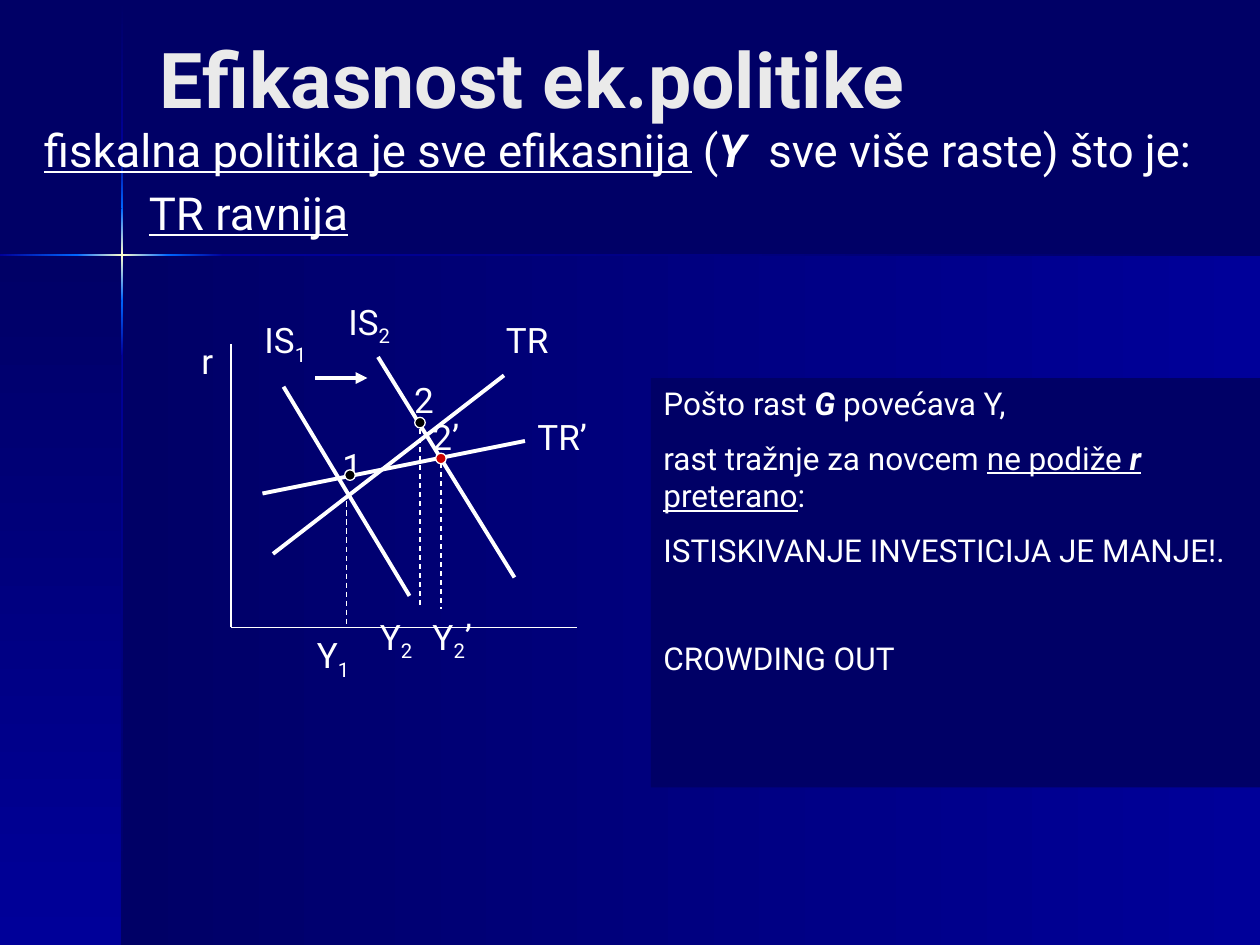
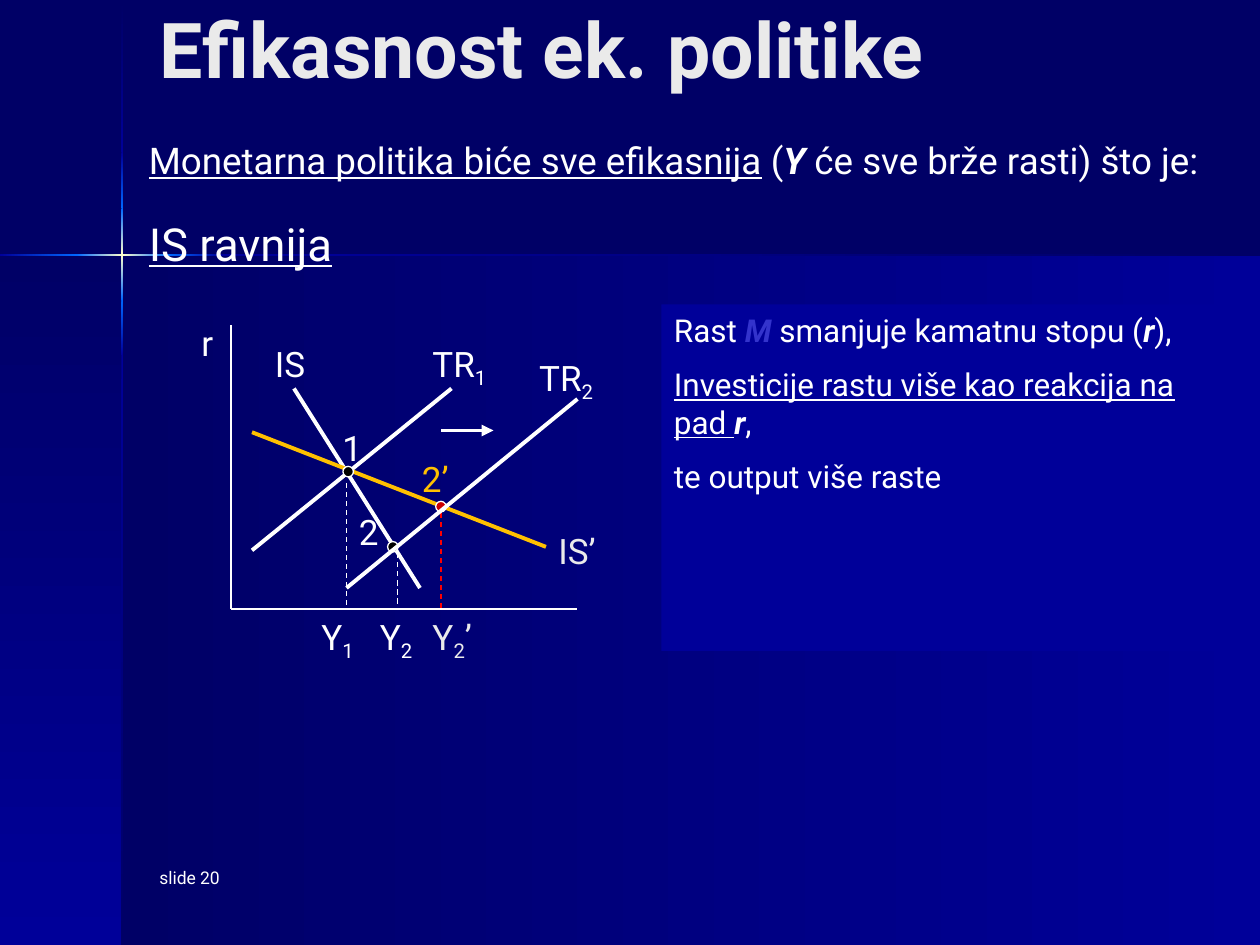
from itertools import pairwise

from lxml import etree
from pptx import Presentation
from pptx.dml.color import RGBColor
from pptx.enum.dml import MSO_LINE
from pptx.enum.shapes import MSO_CONNECTOR, MSO_SHAPE
from pptx.enum.text import MSO_ANCHOR, MSO_AUTO_SIZE, PP_ALIGN
from pptx.oxml.ns import qn
from pptx.util import Pt

RECT, OVAL = MSO_SHAPE.RECTANGLE, MSO_SHAPE.OVAL
STRAIGHT, DASH = MSO_CONNECTOR.STRAIGHT, MSO_LINE.DASH
TOP, MIDDLE = MSO_ANCHOR.TOP, MSO_ANCHOR.MIDDLE
LEFT, NO_FIT = PP_ALIGN.LEFT, MSO_AUTO_SIZE.NONE

FONT = "Roboto"
WIDTH, HEIGHT = 720, 540
STAR_X, STAR_Y = 70, 145.5
TITLE_ONLY = 5
COLORS = {
    "navy": "000066", "blue": "000099", "azure": "0066FF", "cream": "FFFFCC",
    "white": "FFFFFF", "silver": "EAEAEA", "indigo": "3333CC", "gold": "FFC000",
    "black": "000000", "crimson": "CC0000", "red": "FF0000",
}


def color(name):
    """Return the named colour."""
    return RGBColor.from_string(COLORS[name])


def points(*lengths):
    """Convert numbers to lengths in points."""
    return [Pt(length) for length in lengths]


def write(frame, *paragraphs, size=20, ink="white", bold=False, anchor=TOP,
          gaps=(), leading=None):
    """Fill a frame; a run is text or (text, marks b/i/u/s for subscript, colour)."""
    frame.word_wrap = True
    frame.auto_size = NO_FIT
    frame.vertical_anchor = anchor
    for index, runs in enumerate(paragraphs):
        paragraph = frame.add_paragraph() if index else frame.paragraphs[0]
        paragraph.alignment = LEFT
        paragraph.line_spacing = leading
        if index:
            paragraph.space_before = Pt(gaps[index - 1])
        for part in [runs] if isinstance(runs, str) else runs:
            text, marks, tint = ((part,) if isinstance(part, str) else part) \
                + ("", ink)[-3 + (1 if isinstance(part, str) else len(part)):] \
                if isinstance(part, str) or len(part) < 3 else part
            run = paragraph.add_run()
            run.text = text
            font = run.font
            font.name, font.size = FONT, Pt(size)
            font.bold = bold or "b" in marks
            font.italic, font.underline = "i" in marks, "u" in marks
            font.color.rgb = color(tint)
            if "s" in marks:
                run._r.get_or_add_rPr().set("baseline", "-25000")


def add_text(slide, box, *paragraphs, **style):
    """Place a text box."""
    write(slide.shapes.add_textbox(*points(*box)).text_frame, *paragraphs, **style)


def add_solid(slide, kind, box, fill, outline=None):
    """Place a preset shape in one colour."""
    solid = slide.shapes.add_shape(kind, *points(*box))
    solid.shadow.inherit = False
    solid.fill.solid()
    solid.fill.fore_color.rgb = color(fill)
    if outline:
        solid.line.color.rgb = color(outline)
        solid.line.width = Pt(0.75)
    else:
        solid.line.fill.background()
    return solid


def add_line(slide, ends, ink="white", width=2.25, dashed=False, arrow=False):
    """Draw a straight line between two points."""
    line = slide.shapes.add_connector(STRAIGHT, *points(*ends))
    line.line.color.rgb = color(ink)
    line.line.width = Pt(width)
    if dashed:
        line.line.dash_style = DASH
    properties = line.element.spPr
    if arrow:
        etree.SubElement(properties.find(qn("a:ln")), qn("a:tailEnd"), type="triangle")
    etree.SubElement(properties, qn("a:effectLst"))


def add_fade(slide, box, start, end, down):
    """Place a rectangle that fades between two colours."""
    fade = add_solid(slide, RECT, box, start)
    fade.fill.gradient()
    fade.fill.gradient_angle = 270 if down else 0
    for stop, name in zip(fade.fill.gradient_stops, (start, end)):
        stop.color.rgb = color(name)
    return fade


def build_backdrop(master, slide):
    """Build the fading panels and the star beams, and hand them to the master."""
    master.background.fill.solid()
    master.background.fill.fore_color.rgb = color("navy")
    across = ((0, "blue"), (44, "azure"), (STAR_X, "cream"), (96, "azure"),
              (127.5, "blue"), (WIDTH, "navy"))
    down = ((0, "navy"), (87, "blue"), (119, "azure"), (STAR_Y, "cream"),
            (171.5, "azure"), (203, "blue"), (HEIGHT, "navy"))
    below = HEIGHT - STAR_Y
    fades = [
        add_fade(slide, (STAR_X, STAR_Y, WIDTH - STAR_X, below), "navy", "blue", False),
        add_fade(slide, (0, STAR_Y, STAR_X, below), "navy", "blue", True),
    ]
    for (begin, first), (end, last) in pairwise(down):
        beam = (STAR_X - 0.6, begin, 1.2, end - begin)
        fades.append(add_fade(slide, beam, first, last, True))
    for (begin, first), (end, last) in pairwise(across):
        beam = (begin, STAR_Y - 0.6, end - begin, 1.2)
        fades.append(add_fade(slide, beam, first, last, False))
    for position, fade in enumerate(fades, 2):
        master.shapes.element.insert(position, fade.element)


def set_title(slide, text, top):
    """Place and format the slide title."""
    title = slide.shapes.title
    title.left, title.top, title.width, title.height = points(84, top, 594, 113)
    write(title.text_frame, text, size=44, ink="silver", bold=True, anchor=MIDDLE)


def add_panel(slide, box, fill, *paragraphs, gaps):
    """Place the panel that explains the graph."""
    panel = add_solid(slide, RECT, box, fill)
    write(panel.text_frame, *paragraphs, size=18, gaps=gaps)


def add_graph(slide, box, curves, arrow, drops, labels, dots, front=()):
    """Draw axes, curves, dashed drops, labels and equilibrium dots in a box."""
    left, top, width, height = box

    def stroke(x1, y1, x2, y2, **style):
        """Draw a line measured from the corner of the graph."""
        add_line(slide, (left + x1, top + y1, left + x2, top + y2), **style)

    stroke(0, 0, 0, height, width=0.75)
    stroke(0, height, width, height, width=0.75)
    for ends, ink in curves:
        stroke(*ends, ink=ink)
    stroke(*arrow, arrow=True)
    for x, start, end, ink in drops:
        stroke(x, start, x, end, ink=ink, width=0.75, dashed=True)
    for x, y, name, ink in labels:
        add_text(slide, (left + x, top + y, 54, 31), name, ink=ink)
    for x, y, fill in dots:
        add_solid(slide, OVAL, (left + x - 3, top + y - 3, 6, 6), fill, "white")
    for ends, ink in front:
        stroke(*ends, ink=ink)


def indexed(name, index, *tail):
    """Return the runs of a name with a subscript."""
    return [name, (index, "s"), *tail]


def build_fiscal(slide):
    """Build the slide on fiscal policy."""
    set_title(slide, "Efikasnost ek.politike", -12)
    add_text(slide, (18, 66, 702, 54),
             [("fiskalna politika je sve efikasnija", "u"), " (", ("Y ", "bi"),
              " sve više raste) što je:"], size=26)
    add_text(slide, (78, 102, 642, 48), [("TR ravnija", "u")], size=26)
    add_panel(slide, (372, 216, 348, 234), "navy",
              ["Pošto rast ", ("G ", "bi"), "povećava Y,"],
              ["rast tražnje za novcem ", ("ne podiže ", "u"), ("r", "biu"),
               (" preterano", "u"), ":"],
              "ISTISKIVANJE INVESTICIJA JE MANJE!.",
              "CROWDING OUT", gaps=(9.5, 9.5, 40))
    add_graph(
        slide, (132, 196.5, 198, 162),
        curves=[((18, 85.5, 168, 55.5), "white"), ((84, 7.5, 162, 133.5), "white"),
                ((24, 120, 156, 18), "white"), ((30, 24.5, 102, 144), "white")],
        arrow=(48, 19.5, 78, 19.5),
        drops=[(108, 48.5, 150.5, "white"), (66, 90, 162, "white"),
               (120, 68, 151.5, "white")],
        labels=[(168, 37.5, "TR’", "white"), (150, -18, "TR", "white"),
                (12, -18, indexed("IS", "1"), "white"),
                (60, -28.5, indexed("IS", "2"), "white"),
                (42, 162, indexed("Y", "1"), "white"),
                (78, 151.5, indexed("Y", "2"), "white"),
                (108, 151.5, indexed("Y", "2", "’"), "white"),
                (-24, -6, "r", "white"), (56.5, 54, "1", "white"),
                (97.5, 16, "2", "white"), (108, 37.5, "2’", "white")],
        dots=[(68, 75, "black"), (108, 45, "black"), (120, 65.5, "crimson")])


def build_monetary(slide):
    """Build the slide on monetary policy."""
    set_title(slide, "Efikasnost ek. politike", -29)
    add_text(slide, (78, 78, 618, 54),
             [("Monetarna politika biće sve efikasnija", "u"), " (", ("Y ", "bi"),
              "će sve brže rasti) što je:"], size=21, leading=0.9)
    add_text(slide, (78, 120, 642, 48), [("IS ravnija", "u")], size=26)
    add_panel(slide, (378, 174, 318, 198), "blue",
              ["Rast ", ("M ", "bi", "indigo"), "smanjuje kamatnu stopu (",
               ("r", "bi"), "),"],
              [("Investicije rastu više kao reakcija na pad ", "u"), ("r", "bi"), ","],
              "te output više raste", gaps=(9.5, 9.5))
    add_graph(
        slide, (132, 186, 198, 162),
        curves=[((12, 128.5, 126, 36), "white"), ((36, 36, 108, 150), "white"),
                ((12, 61, 180, 126.5), "gold")],
        arrow=(120, 60, 150, 60),
        drops=[(95, 125, 161, "white"), (66, 90, 162, "white"),
               (120, 102, 162, "red")],
        labels=[(18, 6, "IS", "white"), (180, 113, "IS’", "silver"),
                (108, 6, indexed("TR", "1"), "white"),
                (169, 14, indexed("TR", "2"), "white"),
                (44.5, 162, indexed("Y", "1"), "white"),
                (78, 162, indexed("Y", "2"), "white"),
                (108, 162, [("Y", "", "silver"), ("2", "s", "silver"), "’"], "silver"),
                (-24, -6, "r", "white"), (56.5, 54, "1", "white"),
                (66, 102, "2", "white"), (102, 72, "2’", "gold")],
        dots=[(67, 83.5, "black"), (92.5, 126.5, "black"), (120, 103.5, "crimson")],
        front=[((66, 150, 198, 42), "white")])
    add_text(slide, (84, 492, 150, 36), "slide 20", size=10)


def main():
    """Build and save the presentation."""
    deck = Presentation()
    deck.slide_width, deck.slide_height = points(WIDTH, HEIGHT)
    fiscal, monetary = (deck.slides.add_slide(deck.slide_layouts[TITLE_ONLY])
                        for _ in range(2))
    build_backdrop(deck.slide_master, fiscal)
    build_fiscal(fiscal)
    build_monetary(monetary)
    deck.save("out.pptx")


if __name__ == "__main__":
    main()
